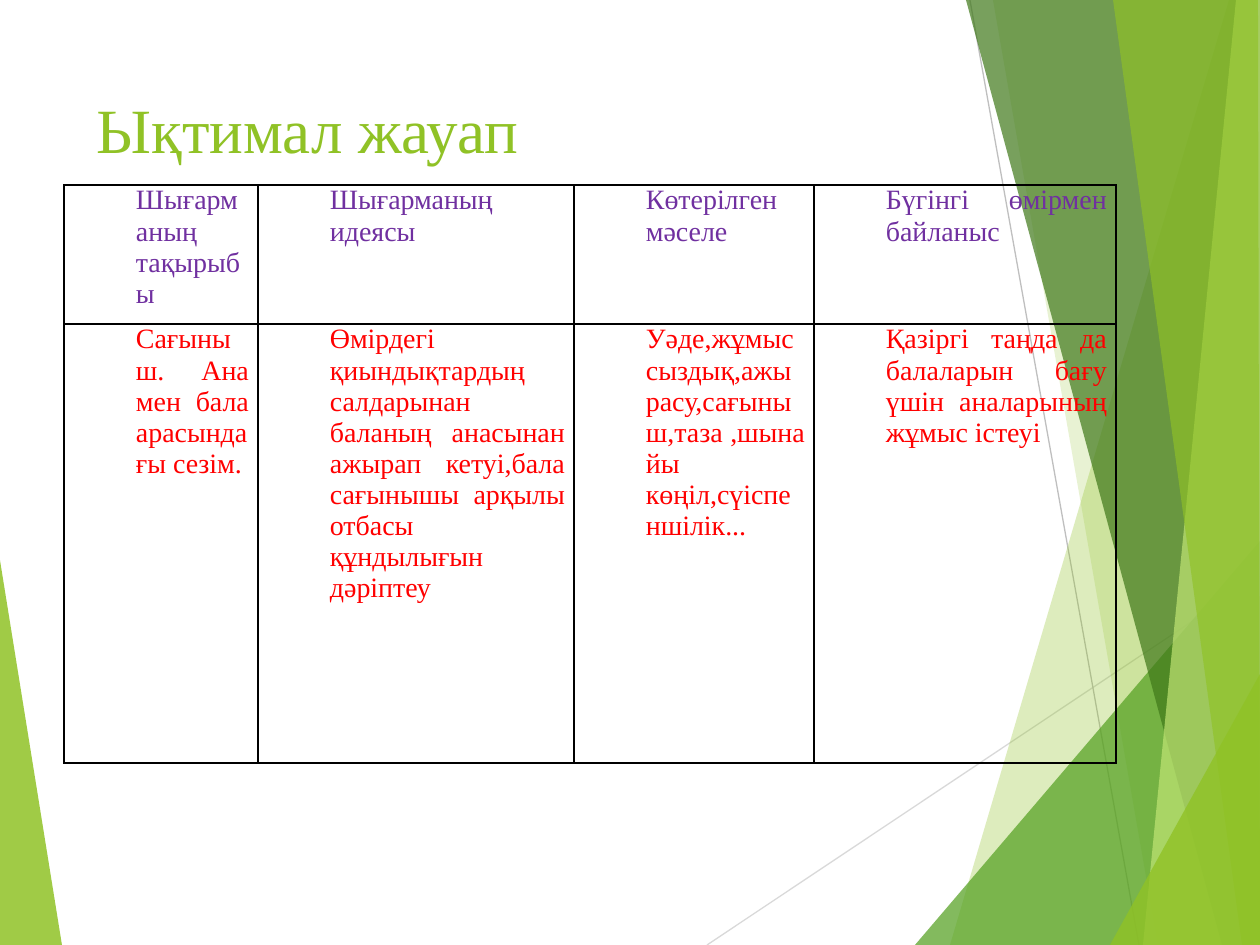
from lxml import etree
from pptx import Presentation
from pptx.dml.color import RGBColor
from pptx.enum.shapes import MSO_CONNECTOR
from pptx.enum.text import MSO_ANCHOR, MSO_AUTO_SIZE, PP_ALIGN
from pptx.oxml.ns import qn
from pptx.util import Pt

SCALE = 914400 / 126
STRAIGHT = MSO_CONNECTOR.STRAIGHT
TOP = MSO_ANCHOR.TOP
LEFT, JUST = PP_ALIGN.LEFT, PP_ALIGN.JUSTIFY
FIXED = MSO_AUTO_SIZE.NONE
FACE = "Times New Roman"
W, H = 1260, 945
LIME = "90C226"

# Colour, opacity in percent, corners
EDGE = (LIME, 85, [(0, 560), (62, H), (0, H)])
FACETS = [
    (LIME, 30, [(1229, 0), (950, H), (W, H), (W, 0)]),
    (LIME, 20, [(993, 0), (1158, H), (W, H), (W, 0)]),
    ("54A021", 72, [(915, H), (W, 541), (W, H)]),
    ("3F7819", 70, [(966, 0), (1222, H), (W, H), (W, 0)]),
    ("C0E474", 70, [(1236, 0), (1143, H), (W, H), (W, 0)]),
    (LIME, 65, [(1113, 0), (1242, H), (W, H), (1258, 0)]),
    (LIME, 80, [(1110, H), (W, 674), (W, H)]),
]
RAYS = [("D9D9D9", (707, H, W, 576)), ("BFBFBF", (970, 0, 1139, H))]

COLS = [194, 316, 240, 302]
ROWS = [139, 439]
INKS = ["7030A0", "FF0000"]
CELLS = [
    ["Шығарманың тақырыбы", "Шығарманың идеясы",
     "Көтерілген мәселе", "Бүгінгі өмірмен байланыс"],
    ["Сағыныш. Ана мен бала арасындағы сезім.",
     "Өмірдегі қиындықтардың салдарынан баланың анасынан ажырап "
     "кетуі,бала сағынышы арқылы отбасы құндылығын дәріптеу",
     "Уәде,жұмыссыздық,ажырасу,сағыныш,таза ,шынайы "
     "көңіл,сүіспеншілік...",
     "Қазіргі таңда да балаларын бағу үшін аналарының жұмыс істеуі"],
]


def px(n):
    return round(n * SCALE)


def rgb(code):
    return RGBColor.from_string(code)


def style(item, props):
    for name, value in props.items():
        setattr(item, name, value)


def write(frame, text, size, ink, align):
    para = frame.paragraphs[0]
    para.alignment = align
    run = para.add_run()
    run.text = text
    style(run.font, {"name": FACE, "size": Pt(size), "bold": False})
    run.font.color.rgb = rgb(ink)
    return para


def facet(slide, hue, alpha, spots):
    pen = slide.shapes.build_freeform(*spots[0], scale=SCALE)
    pen.add_line_segments(spots[1:], close=True)
    shape = pen.convert_to_shape()
    shape.shadow.inherit = False
    shape.fill.solid()
    shape.fill.fore_color.rgb = rgb(hue)
    shape.line.fill.background()
    tint = shape.fill._xPr.find(qn("a:solidFill"))[0]
    etree.SubElement(tint, qn("a:alpha"), val=str(alpha * 1000))


def ray(slide, hue, ends):
    line = slide.shapes.add_connector(STRAIGHT, *map(px, ends))
    line.line.color.rgb = rgb(hue)
    line.line.width = Pt(0.75)
    etree.SubElement(line._element.spPr, qn("a:effectLst"))


def title(slide, text):
    box = slide.shapes.title
    style(box, {"left": px(84), "top": px(84),
                "width": px(875), "height": px(181)})
    style(box.text_frame, {"word_wrap": True, "auto_size": FIXED,
                           "vertical_anchor": TOP})
    write(box.text_frame, text, 36, LIME, LEFT)


def border(cell):
    props = cell._tc.get_or_add_tcPr()
    for side in ("lnL", "lnR", "lnT", "lnB"):
        line = etree.SubElement(props, qn("a:" + side), w=str(Pt(1)))
        fill = etree.SubElement(line, qn("a:solidFill"))
        etree.SubElement(fill, qn("a:srgbClr"), val="000000")


def grid(slide):
    frame = slide.shapes.add_table(
        len(ROWS), len(COLS), px(64), px(185), px(sum(COLS)), px(sum(ROWS)))
    table = frame.table
    style(table, {"first_row": False, "horz_banding": False})
    for col, width in zip(table.columns, COLS):
        col.width = px(width)
    for r, (tall, ink) in enumerate(zip(ROWS, INKS)):
        table.rows[r].height = px(tall)
        for c, text in enumerate(CELLS[r]):
            cell = table.cell(r, c)
            style(cell, {"margin_left": px(9), "margin_right": px(9),
                         "margin_top": 0, "margin_bottom": 0,
                         "vertical_anchor": TOP})
            border(cell)
            cell.fill.background()
            para = write(cell.text_frame, text, 16, ink, JUST)
            props = para._p.get_or_add_pPr()
            props.set("marL", str(px(63)))
            props.set("indent", "0")


def main():
    deck = Presentation()
    style(deck, {"slide_width": px(W), "slide_height": px(H)})
    slide = deck.slides.add_slide(deck.slide_layouts[5])

    # Background facets and rays
    facet(slide, *EDGE)
    for item in RAYS:
        ray(slide, *item)
    for item in FACETS:
        facet(slide, *item)

    # Title and table
    title(slide, "Ықтимал жауап")
    grid(slide)

    deck.save("out.pptx")


if __name__ == "__main__":
    main()
